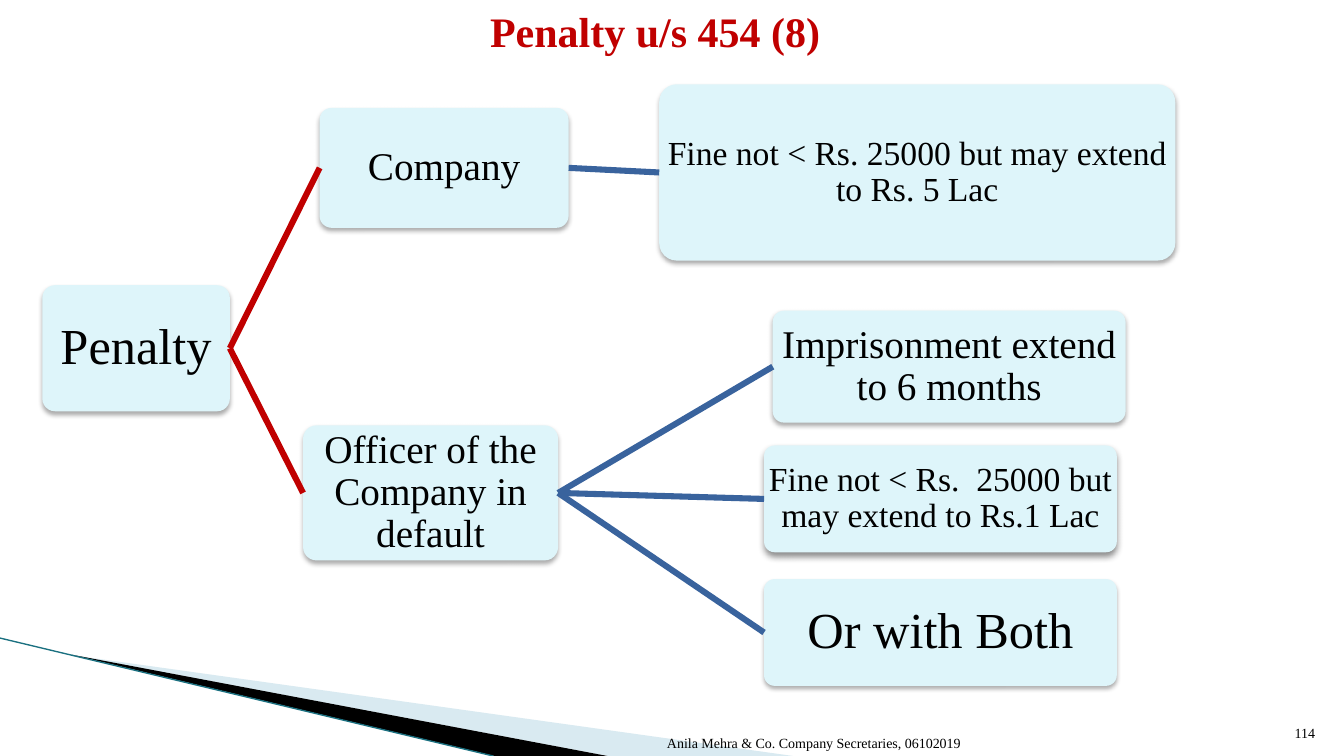
from lxml.etree import SubElement
from pptx import Presentation
from pptx.dml.color import RGBColor
from pptx.enum.shapes import MSO_CONNECTOR, MSO_SHAPE
from pptx.enum.text import MSO_ANCHOR, PP_ALIGN
from pptx.oxml.ns import qn
from pptx.util import Inches, Pt

WIDTH, HEIGHT = Inches(13.33), Inches(7.5)
FONT = "Times New Roman"
BLACK = RGBColor(0x00, 0x00, 0x00)
RED = RGBColor(0xC0, 0x00, 0x00)
BLUE = RGBColor(0x39, 0x63, 0x9D)
PALE_CYAN = RGBColor(0xDE, 0xF5, 0xFA)
WEDGE_BLUE = RGBColor(0xA0, 0xCB, 0xDC)
TEAL = RGBColor(0x1A, 0x70, 0x80)
LEFT_SITE, RIGHT_SITE = 1, 3


def across(percent):
    return round(WIDTH * percent / 100)


def down(percent):
    return round(HEIGHT * percent / 100)


def area(left, top, width, height):
    """Turn percentages of the slide into a rectangle."""
    return across(left), down(top), across(width), down(height)


def write(frame, text, size, color=BLACK, align=PP_ALIGN.CENTER,
          anchor=MSO_ANCHOR.MIDDLE, bold=False, spacing=1.0):
    frame.word_wrap = True
    frame.vertical_anchor = anchor
    paragraph = frame.paragraphs[0]
    paragraph.alignment = align
    paragraph.line_spacing = spacing
    run = paragraph.add_run()
    run.text = text
    run.font.name = FONT
    run.font.size = Pt(size)
    run.font.bold = bold
    run.font.color.rgb = color


def cast_shadow(shape, alpha=32, blur=3.5, distance=2.2):
    effects = SubElement(shape._element.spPr, qn("a:effectLst"))
    shadow = SubElement(effects, qn("a:outerShdw"), blurRad=str(Pt(blur)),
                        dist=str(Pt(distance)), dir="5400000", rotWithShape="0")
    color = SubElement(shadow, qn("a:srgbClr"), val=str(BLACK))
    SubElement(color, qn("a:alpha"), val=str(alpha * 1000))


def add_node(slide, place, text, size, **shadow):
    node = slide.shapes.add_shape(MSO_SHAPE.ROUNDED_RECTANGLE, *area(*place))
    node.adjustments[0] = 0.1
    node.fill.solid()
    node.fill.fore_color.rgb = PALE_CYAN
    node.line.fill.background()
    cast_shadow(node, **shadow)
    frame = node.text_frame
    frame.margin_left = frame.margin_right = 0
    frame.margin_top = frame.margin_bottom = Inches(0.02)
    write(frame, text, size, spacing=0.9)
    return node


def add_line(slide, start, end, color, width):
    line = slide.shapes.add_connector(MSO_CONNECTOR.STRAIGHT, *start, *end)
    line.line.color.rgb = color
    line.line.width = Pt(width)
    SubElement(line._element.spPr, qn("a:effectLst"))
    return line


def add_branch(slide, parent, child, color):
    branch = add_line(slide, (0, 0), (0, 0), color, 4.33)
    branch.begin_connect(parent, RIGHT_SITE)
    branch.end_connect(child, LEFT_SITE)


def add_wedge(slide, corners, color, alpha=100):
    first, *others = [(across(x), down(y)) for x, y in corners]
    builder = slide.shapes.build_freeform(*first)
    builder.add_line_segments(others, close=True)
    wedge = builder.convert_to_shape()
    wedge.shadow.inherit = False
    wedge.fill.solid()
    wedge.fill.fore_color.rgb = color
    wedge.line.fill.background()
    fill_color = wedge._element.spPr.find(qn("a:solidFill"))[0]
    SubElement(fill_color, qn("a:alpha"), val=str(alpha * 1000))


def add_caption(slide, place, text):
    caption = slide.shapes.add_textbox(*area(*place))
    write(caption.text_frame, text, 10, align=PP_ALIGN.RIGHT,
          anchor=MSO_ANCHOR.BOTTOM)


def add_title(slide, text):
    title = slide.shapes.title
    title.left, title.top, title.width, title.height = area(3.75, 0, 90, 8.93)
    write(title.text_frame, text, 30, color=RED, bold=True,
          anchor=MSO_ANCHOR.TOP)


def add_corner(slide):
    add_wedge(slide, [(5.48, 86.7), (59, 100), (45.2, 100)], WEDGE_BLUE, 40)
    add_wedge(slide, [(5.33, 86.6), (45.2, 100), (36.8, 100)], BLACK)
    add_line(slide, (0, down(84.4)), (across(36.7), HEIGHT), TEAL, 0.95)


def add_penalty_tree(slide):
    penalty = add_node(slide, (3.15, 37.73, 13.95, 16.67), "Penalty", 36)
    company = add_node(slide, (23.78, 14.27, 18.53, 15.87), "Company", 28)
    officer = add_node(slide, (22.55, 56.27, 18.98, 17.87),
                       "Officer of the Company in default", 28)
    company_fine = add_node(slide, (49.05, 11.15, 38.4, 23.33),
                            "Fine not < Rs. 25000 but may extend to Rs. 5 Lac", 24)
    prison = add_node(slide, (57.5, 41.1, 26.25, 14.8),
                      "Imprisonment extend to 6 months", 28)
    officer_fine = add_node(slide, (56.85, 58.93, 26.25, 14.13),
                            "Fine not < Rs.  25000 but may extend to Rs.1 Lac", 24,
                            alpha=45, blur=5, distance=3)
    both = add_node(slide, (56.85, 76.6, 26.25, 14.13), "Or with Both", 36)

    for offender in (company, officer):
        add_branch(slide, penalty, offender, RED)
    add_branch(slide, company, company_fine, BLUE)
    for punishment in (prison, officer_fine, both):
        add_branch(slide, officer, punishment, BLUE)


def main():
    deck = Presentation()
    deck.slide_width, deck.slide_height = WIDTH, HEIGHT
    slide = deck.slides.add_slide(deck.slide_layouts[5])

    # Corner decoration
    add_corner(slide)

    # Title and tree
    add_title(slide, "Penalty u/s 454 (8)")
    add_penalty_tree(slide)

    # Footer and page number
    add_caption(slide, (32.3, 94.7, 39.91, 5.33),
                "Anila Mehra & Co. Company Secretaries, 06102019")
    add_caption(slide, (94.6, 93.4, 3.98, 5.33), "114")

    deck.save("out.pptx")


if __name__ == "__main__":
    main()
